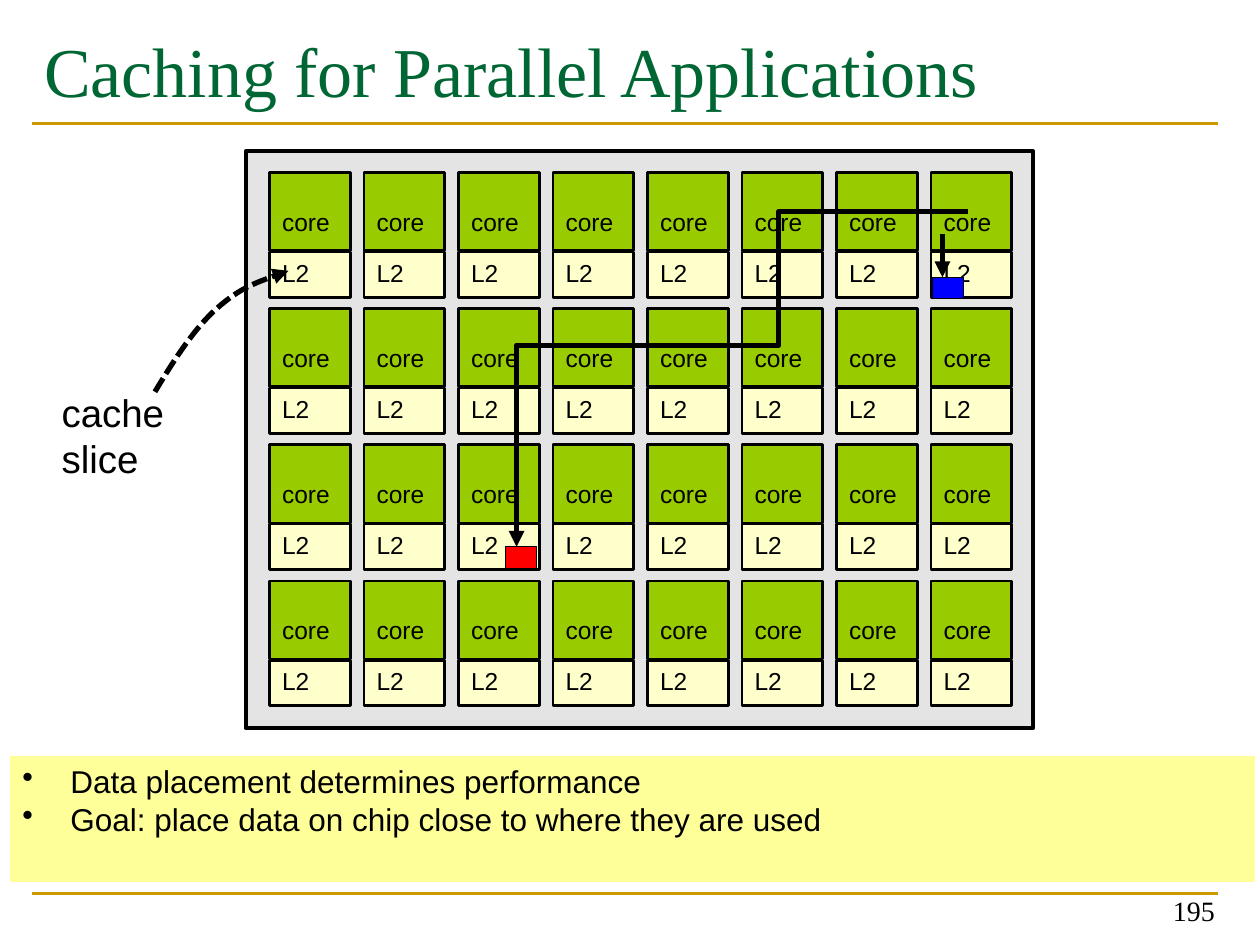
import pptx
import pptx.util
import pptx.dml.color
import pptx.enum.dml
import pptx.enum.shapes
import pptx.enum.text
import pptx.oxml
import pptx.oxml.ns
from dataclasses import dataclass

Inches = pptx.util.Inches
Pt = pptx.util.Pt
Anchor = pptx.enum.text.MSO_ANCHOR
Align = pptx.enum.text.PP_ALIGN


@dataclass(frozen=True)
class Theme:
    heading_font: str = "Times New Roman"
    body_font: str = "Arial"
    title_size: int = 40
    label_size: int = 22
    point_size: int = 18
    number_size: int = 16
    tile_size: int = 14
    ink: str = "000000"
    heading: str = "006633"
    rule: str = "CC9900"
    chip: str = "E4E4E4"
    core: str = "99CC00"
    cache: str = "FFFFCC"
    panel: str = "FFFF99"
    near_data: str = "0000FF"
    far_data: str = "FF0000"


THEME = Theme()


def rgb(value):
    return pptx.dml.color.RGBColor.from_string(value)


def add_xml(parent, tag, **attributes):
    child = pptx.oxml.parse_xml(f"<a:{tag} {pptx.oxml.ns.nsdecls('a')}/>")
    for name, value in attributes.items():
        child.set(name, value)
    parent.append(child)


def style_paragraph(paragraph, size, font=THEME.body_font, color=THEME.ink):
    paragraph.font.name = font
    paragraph.font.size = Pt(size)
    paragraph.font.color.rgb = rgb(color)


def hang_indent(paragraph, bullet=None):
    properties = paragraph._p.get_or_add_pPr()
    properties.set("marL", str(Inches(0.38)))
    properties.set("indent", str(-Inches(0.38)))
    if bullet:
        add_xml(properties, "buChar", char=bullet)


def write_lines(frame, lines, size, font=THEME.body_font, align=Align.LEFT):
    frame.text = "\n".join(lines)
    for paragraph in frame.paragraphs:
        paragraph.alignment = align
        style_paragraph(paragraph, size, font)


def add_box(slide, left, top, width, height, fill, line_width=None):
    box = slide.shapes.add_shape(
        pptx.enum.shapes.MSO_SHAPE.RECTANGLE,
        Inches(left), Inches(top), Inches(width), Inches(height))
    box.shadow.inherit = False
    box.fill.solid()
    box.fill.fore_color.rgb = rgb(fill)
    if line_width is None:
        box.line.fill.background()
    else:
        box.line.color.rgb = rgb(THEME.ink)
        box.line.width = Pt(line_width)
    return box


def add_text(slide, left, top, width, height, lines, size, **style):
    label = slide.shapes.add_textbox(
        Inches(left), Inches(top), Inches(width), Inches(height))
    write_lines(label.text_frame, lines, size, **style)
    return label.text_frame


def add_line(slide, start, end, color, width):
    line = slide.shapes.add_connector(
        pptx.enum.shapes.MSO_CONNECTOR.STRAIGHT,
        *(Inches(value) for value in (*start, *end)))
    line.line.color.rgb = rgb(color)
    line.line.width = Pt(width)
    add_xml(line._element.spPr, "effectLst")
    return line


def add_arrowhead(shape):
    add_xml(shape.line._get_or_add_ln(), "tailEnd", type="triangle")


def add_route(slide, points):
    corners = [(Inches(x), Inches(y)) for x, y in points]
    builder = slide.shapes.build_freeform(*corners[0])
    builder.add_line_segments(corners[1:], close=False)
    route = builder.convert_to_shape()
    route.shadow.inherit = False
    route.fill.background()
    route.line.color.rgb = rgb(THEME.ink)
    route.line.width = Pt(3)
    return route


def bend_route(route):
    steps = route._element.xpath(".//a:lnTo")
    for first in range(0, len(steps), 3):
        curve = pptx.oxml.parse_xml(
            f"<a:cubicBezTo {pptx.oxml.ns.nsdecls('a')}/>")
        steps[first].addprevious(curve)
        for step in steps[first:first + 3]:
            curve.append(step[0])
            step.getparent().remove(step)


def add_tile(slide, left, top):
    core = add_box(slide, left, top, 0.64, 0.62, THEME.core, 1.5).text_frame
    write_lines(core, ["core"], THEME.tile_size)
    core.vertical_anchor = Anchor.TOP
    core.margin_top = Inches(0.27)
    core.margin_bottom = 0

    cache = add_box(
        slide, left, top + 0.63, 0.64, 0.36, THEME.cache, 1.5).text_frame
    write_lines(cache, ["L2"], THEME.tile_size)
    cache.vertical_anchor = Anchor.MIDDLE
    cache.word_wrap = False
    cache.paragraphs[0].line_spacing = 0.9
    hang_indent(cache.paragraphs[0])


def add_frame(slide):
    for height in (7.09, 0.98):
        add_line(slide, (0.25, height), (9.67, height), THEME.rule, 1.5)
    title = slide.shapes.title
    title.left, title.top = Inches(0.25), Inches(0.17)
    title.width, title.height = Inches(9.42), Inches(1.17)
    title.text = "Caching for Parallel Applications"
    title.text_frame.vertical_anchor = Anchor.TOP
    heading = title.text_frame.paragraphs[0]
    heading.alignment = Align.LEFT
    style_paragraph(
        heading, THEME.title_size, THEME.heading_font, THEME.heading)
    number = add_text(
        slide, 7.41, 6.91, 2.33, 0.5, ["195"], THEME.number_size,
        font=THEME.heading_font, align=Align.RIGHT)
    number.word_wrap = True
    number.vertical_anchor = Anchor.BOTTOM


def add_chip(slide):
    add_box(slide, 1.95, 1.2, 6.25, 4.58, THEME.chip, 2.25)
    for row in range(4):
        for column in range(8):
            add_tile(slide, 2.14 + 0.75 * column, 1.37 + 1.08 * row)


def add_takeaways(slide):
    panel = add_box(slide, 0.08, 6, 9.88, 1, THEME.panel).text_frame
    panel.vertical_anchor = Anchor.TOP
    write_lines(panel, [
        "Data placement determines performance",
        "Goal: place data on chip close to where they are used",
    ], THEME.point_size)
    for point in panel.paragraphs:
        hang_indent(point, "•")


def add_accesses(slide):
    add_box(slide, 7.4, 2.2, 0.25, 0.17, THEME.near_data, 0.75)
    add_arrowhead(add_line(slide, (7.48, 1.86), (7.48, 2.2), THEME.ink, 3))
    add_box(slide, 4.01, 4.34, 0.25, 0.17, THEME.far_data, 0.75)
    add_arrowhead(add_route(slide, [
        (7.68, 1.68), (6.18, 1.68), (6.18, 2.74), (4.1, 2.74), (4.1, 4.34)]))


def add_slice_callout(slide):
    label = add_text(
        slide, 0.39, 3.04, 1.09, 0.92, ["cache", "slice"], THEME.label_size)
    label.word_wrap = False
    label.auto_size = pptx.enum.text.MSO_AUTO_SIZE.SHAPE_TO_FIT_TEXT
    pointer = add_route(slide, [
        (1.23, 3.11), (1.38, 2.86), (1.54, 2.61), (1.72, 2.45),
        (1.9, 2.29), (2.09, 2.22), (2.29, 2.15)])
    bend_route(pointer)
    pointer.line.dash_style = pptx.enum.dml.MSO_LINE.SQUARE_DOT
    add_arrowhead(pointer)


def main():
    deck = pptx.Presentation()
    deck.slide_width, deck.slide_height = Inches(10), Inches(7.5)
    slide = deck.slides.add_slide(deck.slide_layouts[5])
    add_frame(slide)
    add_chip(slide)
    add_takeaways(slide)
    add_accesses(slide)
    add_slice_callout(slide)
    deck.save("out.pptx")


if __name__ == "__main__":
    main()
